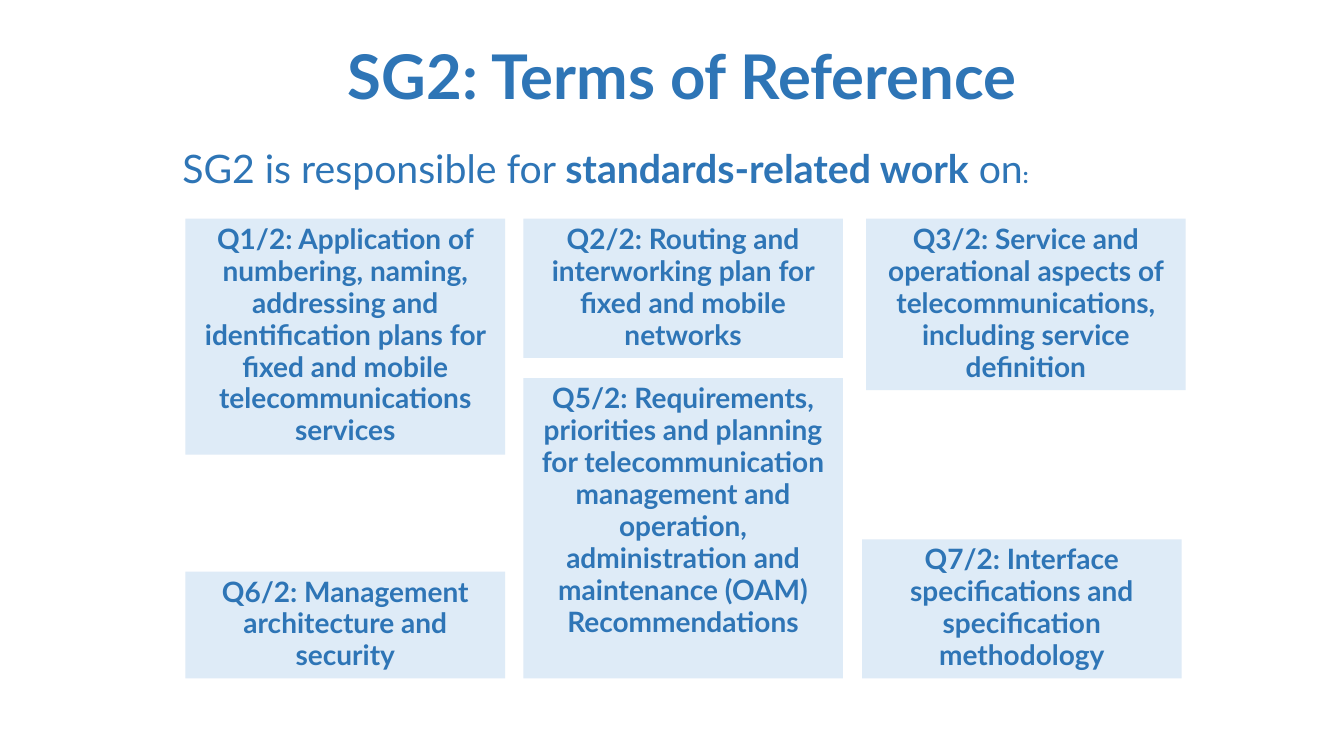
from dataclasses import dataclass

import pptx
import pptx.dml.color
import pptx.enum.shapes
import pptx.enum.text
import pptx.util

FONT = "Lato"
BLUE = "2E75B6"
PALE_BLUE = "DEEBF7"

COLUMN_LEFTS = (1.84, 5.19, 8.55)
BOX_WIDTH = 3.17
GRID_TOP = 2.17
GRID_BOTTOM = 6.73
LINE_HEIGHT = 0.32
BOX_PADDING = 0.1


@dataclass(frozen=True)
class Question:
    text: str
    column: int
    lines: int
    at_bottom: bool = False
    shift: float = 0.0

    @property
    def height(self) -> float:
        return self.lines * LINE_HEIGHT + BOX_PADDING

    @property
    def left(self) -> float:
        return COLUMN_LEFTS[self.column] + self.shift

    @property
    def top(self) -> float:
        return GRID_BOTTOM - self.height if self.at_bottom else GRID_TOP


@dataclass(frozen=True)
class Phrase:
    text: str
    size: float = 28
    bold: bool = False


QUESTIONS = (
    Question("Q1/2: Application of numbering, naming, addressing and identification "
             "plans for fixed and mobile telecommunications services", 0, 7),
    Question("Q2/2: Routing and interworking plan for fixed and mobile networks", 1, 4),
    Question("Q5/2: Requirements, priorities and planning for telecommunication "
             "management and operation, administration and maintenance (OAM) "
             "Recommendations", 1, 9, at_bottom=True),
    Question("Q3/2: Service and operational aspects of telecommunications, "
             "including service definition", 2, 5, shift=0.04),
    Question("Q6/2: Management architecture and security", 0, 3, at_bottom=True),
    Question("Q7/2: Interface specifications and specification methodology",
             2, 4, at_bottom=True),
)

INTRODUCTION = (
    Phrase("SG2 is responsible for "),
    Phrase("standards-related work", bold=True),
    Phrase(" on"),
    Phrase(":", size=16, bold=True),
)


def colour(value: str) -> pptx.dml.color.RGBColor:
    return pptx.dml.color.RGBColor.from_string(value)


def inches(*lengths: float) -> list[pptx.util.Length]:
    return [pptx.util.Inches(length) for length in lengths]


def format_span(span, size: float, bold: bool) -> None:
    span.font.name = FONT
    span.font.size = pptx.util.Pt(size)
    span.font.bold = bold
    span.font.color.rgb = colour(BLUE)


def add_title(page) -> None:
    title = page.shapes.title
    title.left, title.top, title.width, title.height = inches(1.04, 0.35, 11.46, 0.79)
    frame = title.text_frame
    frame.margin_left, frame.margin_right = inches(0.05, 0.05)
    frame.margin_top, frame.margin_bottom = inches(0.02, 0.02)
    frame.text = "SG2: Terms of Reference"
    para = frame.paragraphs[0]
    para.alignment = pptx.enum.text.PP_ALIGN.CENTER
    format_span(para.runs[0], 44, True)


def add_introduction(page) -> None:
    box = page.shapes.add_textbox(*inches(1.71, 1.42, 12.1, 0.55))
    box.text_frame.word_wrap = True
    para = box.text_frame.paragraphs[0]
    para.line_spacing = 0.95
    for phrase in INTRODUCTION:
        span = para.add_run()
        span.text = phrase.text
        format_span(span, phrase.size, phrase.bold)


def add_question(page, question: Question) -> None:
    box = page.shapes.add_shape(
        pptx.enum.shapes.MSO_SHAPE.RECTANGLE,
        *inches(question.left, question.top, BOX_WIDTH, question.height))
    box.shadow.inherit = False
    box.fill.solid()
    box.fill.fore_color.rgb = colour(PALE_BLUE)
    box.line.fill.background()
    frame = box.text_frame
    frame.word_wrap = True
    frame.vertical_anchor = pptx.enum.text.MSO_ANCHOR.TOP
    frame.text = question.text
    para = frame.paragraphs[0]
    para.alignment = pptx.enum.text.PP_ALIGN.CENTER
    para.line_spacing = 0.95
    format_span(para.runs[0], 20, True)


def main() -> None:
    deck = pptx.Presentation()
    deck.slide_width, deck.slide_height = inches(13.33, 7.5)
    title_only = deck.slide_layouts.get_by_name("Title Only")
    page = deck.slides.add_slide(title_only)
    add_title(page)
    add_introduction(page)
    for question in QUESTIONS:
        add_question(page, question)
    deck.save("out.pptx")


if __name__ == "__main__":
    main()
